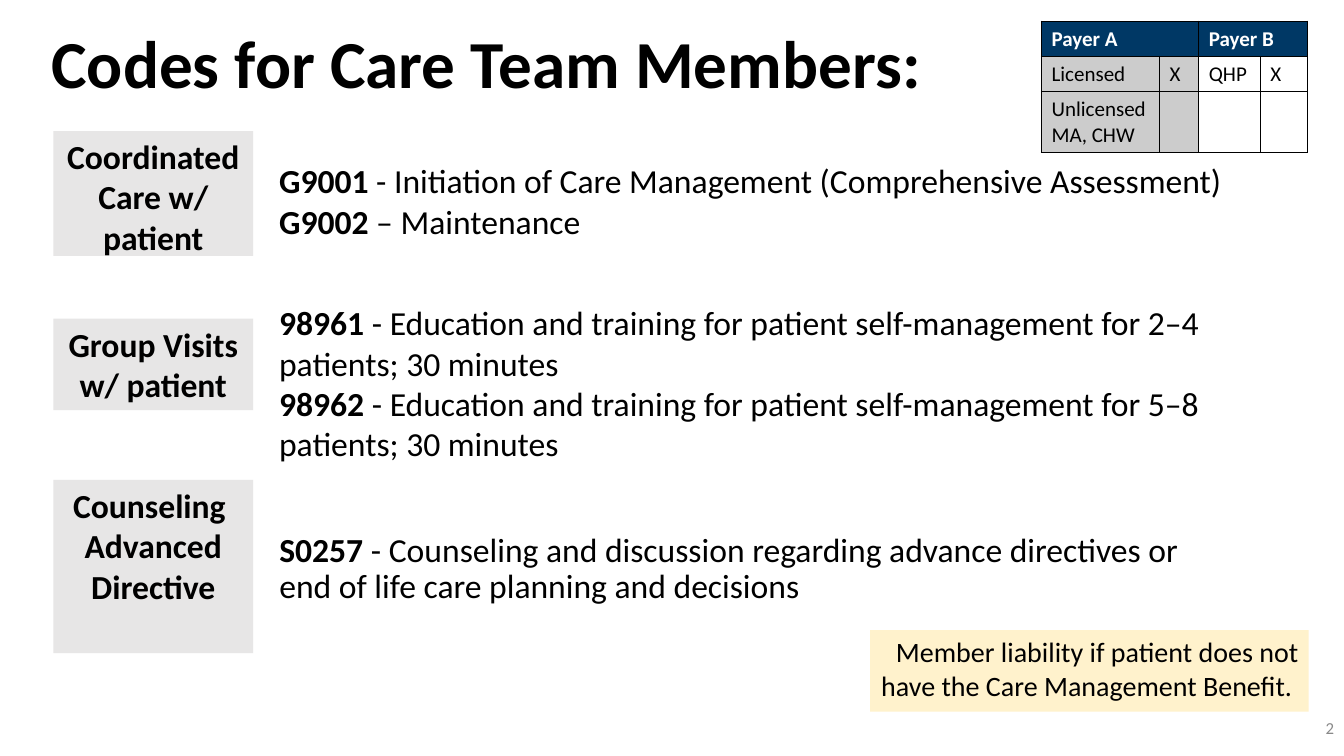
from lxml import etree
from pptx import Presentation
from pptx import util as u
from pptx.dml.color import RGBColor
from pptx.enum import shapes, text
from pptx.oxml import ns

COLORS = {
    "text": "000000", "navy": "003865", "white": "FFFFFF", "label": "E7E6E6",
    "shaded": "CCCCCC", "notice": "FFF2CC", "number": "898989",
}
FONT = "Calibri"
LEFT, CENTER, RIGHT = text.PP_ALIGN.LEFT, text.PP_ALIGN.CENTER, text.PP_ALIGN.RIGHT
LABEL_LEFT, LABEL_WIDTH, CODES_LEFT = 0.53, 1.98, 2.67


def rgb(name):
    return RGBColor.from_string(COLORS[name])


def box(*lengths):
    return [u.Inches(length) for length in lengths]


def place(shape, *lengths):
    shape.left, shape.top, shape.width, shape.height = box(*lengths)


def write(frame, lines, size, color="text", bold=None, align=LEFT, spacing=1.0):
    """Fill a frame; a line is a string or a (code, description) pair."""
    frame.word_wrap = True
    for index, line in enumerate(lines):
        paragraph = frame.paragraphs[0] if index == 0 else frame.add_paragraph()
        paragraph.alignment = align
        paragraph.line_spacing = spacing
        paragraph.space_before = u.Pt(0)
        font = paragraph.font
        font.name, font.size, font.bold = FONT, u.Pt(size), bold
        font.color.rgb = rgb(color)
        if isinstance(line, str):
            paragraph.add_run().text = line
        else:
            for part, is_code in zip(line, (True, False)):
                run = paragraph.add_run()
                run.text, run.font.bold = part, is_code


def add_block(slide, bounds, fill, lines, size, **style):
    block = slide.shapes.add_shape(shapes.MSO_SHAPE.RECTANGLE, *box(*bounds))
    block.shadow.inherit = False
    block.fill.solid()
    block.fill.fore_color.rgb = rgb(fill)
    block.line.fill.background()
    block.text_frame.vertical_anchor = text.MSO_ANCHOR.TOP
    write(block.text_frame, lines, size, **style)


def add_text(slide, bounds, lines, size, **style):
    frame = slide.shapes.add_textbox(*box(*bounds)).text_frame
    write(frame, lines, size, **style)


def remove_bullets(frame):
    for paragraph in frame.paragraphs:
        properties = paragraph._p.get_or_add_pPr()
        properties.set("marL", "0")
        properties.set("indent", "0")
        etree.SubElement(properties, ns.qn("a:buNone"))


def format_cell(cell, fill):
    properties = cell._tc.get_or_add_tcPr()
    for side in ("lnL", "lnR", "lnT", "lnB"):
        border = etree.SubElement(properties, ns.qn(f"a:{side}"), w=str(u.Pt(1)))
        solid = etree.SubElement(border, ns.qn("a:solidFill"))
        etree.SubElement(solid, ns.qn("a:srgbClr"), val=COLORS["text"])
    cell.fill.solid()
    cell.fill.fore_color.rgb = rgb(fill)
    cell.margin_left = cell.margin_right = u.Inches(0.1)
    cell.margin_top = cell.margin_bottom = u.Inches(0.05)


def add_payer_table(slide):
    rows = [
        [["Payer A"], [], ["Payer B"], []],
        [["Licensed"], ["X"], ["QHP"], ["X"]],
        [["Unlicensed", "MA, CHW"], [], [], []],
    ]
    table = slide.shapes.add_table(3, 4, *box(10.33, 0.21, 2.65, 1.3)).table
    for column, width in zip(table.columns, (1.17, 0.39, 0.61, 0.47)):
        column.width = u.Inches(width)
    for row, height in zip(table.rows, (0.34, 0.34, 0.59)):
        row.height = u.Inches(height)
    for r, row in enumerate(rows):
        for c, lines in enumerate(row):
            header = r == 0
            cell = table.cell(r, c)
            format_cell(cell, "navy" if header else "shaded" if c < 2 else "white")
            write(cell.text_frame, lines, 15,
                  color="white" if header else "text", bold=header)
    for start in (0, 2):
        table.cell(0, start).merge(table.cell(0, start + 1))


def main():
    prs = Presentation()
    prs.slide_width, prs.slide_height = box(13.33, 7.5)
    slide = prs.slides.add_slide(prs.slide_layouts[1])
    title, counseling = slide.placeholders

    # Title
    place(title, 0.41, 0.25, 11.76, 0.72)
    title.text_frame.auto_size = text.MSO_AUTO_SIZE.NONE
    title.text_frame.vertical_anchor = text.MSO_ANCHOR.MIDDLE
    write(title.text_frame, ["Codes for Care Team Members:"], 48, bold=True)

    # Category labels
    for top, height, lines in (
        (1.3, 1.24, ["Coordinated Care w/ patient"]),
        (3.16, 0.91, ["Group Visits w/ patient"]),
        (4.76, 1.72, ["Counseling ", "Advanced Directive"]),
    ):
        add_block(slide, (LABEL_LEFT, top, LABEL_WIDTH, height), "label",
                  lines, 24, bold=True, align=CENTER)

    # Billing codes
    add_text(slide, (CODES_LEFT, 1.54, 10.14, 0.91), [
        ("G9001", " - Initiation of Care Management (Comprehensive Assessment)"),
        ("G9002", " – Maintenance"),
    ], 24)
    training = " - Education and training for patient self-management for {} patients; 30 minutes"
    add_text(slide, (CODES_LEFT, 2.95, 9.87, 1.72), [
        ("98961", training.format("2–4")),
        ("98962", training.format("5–8")),
    ], 24)
    place(counseling, CODES_LEFT, 5.24, 9.24, 0.75)
    counseling.text_frame.auto_size = text.MSO_AUTO_SIZE.NONE
    write(counseling.text_frame, [
        ("S0257", " - Counseling and discussion regarding advance directives or "
                  "end of life care planning and decisions"),
    ], 24, spacing=0.9)
    remove_bullets(counseling.text_frame)

    # Payer table, liability notice and slide number
    add_payer_table(slide)
    add_block(slide, (8.63, 6.25, 4.35, 0.81), "notice", [
        "Member liability if patient does not have the Care Management Benefit. ",
    ], 20, align=RIGHT)
    add_text(slide, (10.33, 7.09, 3, 0.4), ["2"], 12,
             color="number", align=RIGHT, spacing=0.9)

    prs.save("out.pptx")


if __name__ == "__main__":
    main()
